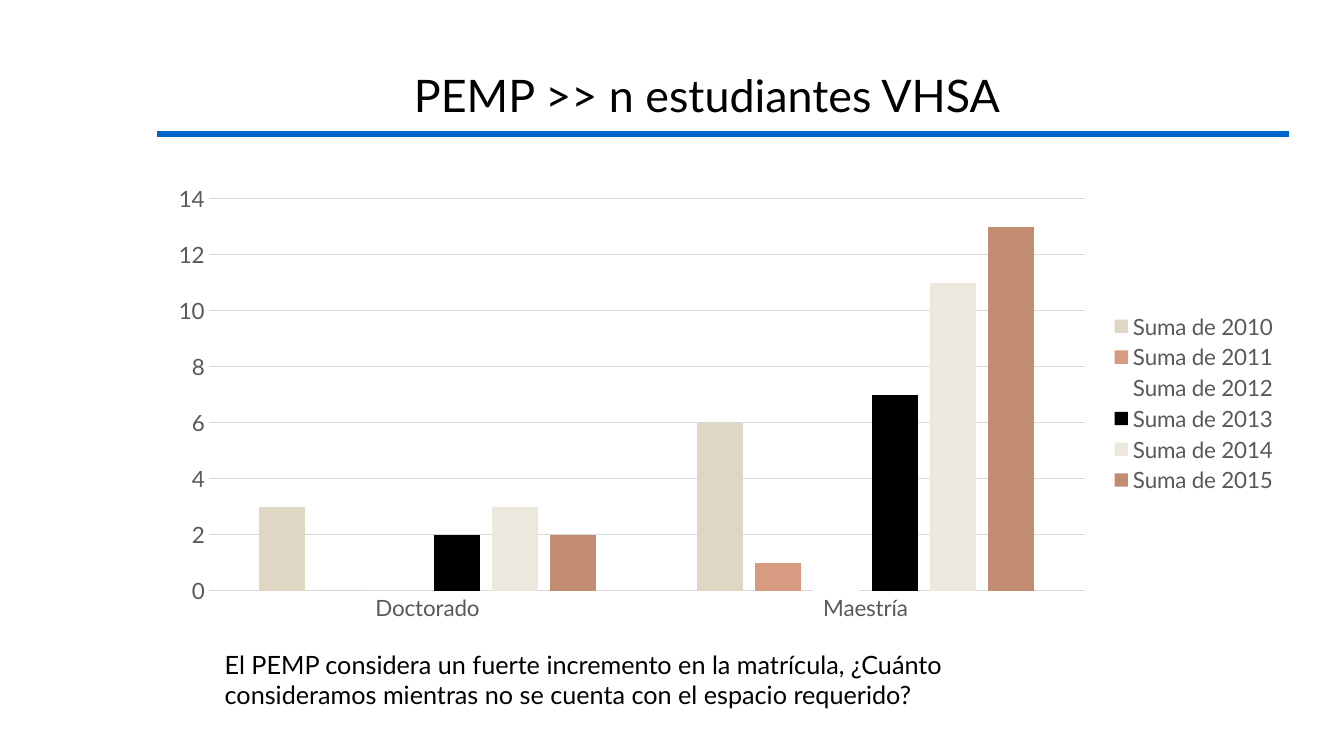
from pptx import Presentation
from pptx.chart.data import CategoryChartData
from pptx.dml.color import RGBColor
from pptx.enum.chart import XL_CHART_TYPE, XL_LEGEND_POSITION, XL_TICK_MARK
from pptx.enum.shapes import MSO_CONNECTOR
from pptx.enum.text import MSO_ANCHOR, PP_ALIGN
from pptx.oxml.ns import qn
from pptx.util import Pt
from lxml.etree import SubElement

EMU_PER_PX = 9144
BLACK = RGBColor(0x00, 0x00, 0x00)
BLUE = RGBColor(0x00, 0x66, 0xCC)
GRAY = RGBColor(0x59, 0x59, 0x59)
GRID = RGBColor(0xD9, 0xD9, 0xD9)
SAND = RGBColor(0xDF, 0xD6, 0xC3)
SALMON = RGBColor(0xD6, 0x9B, 0x80)
WHITE = RGBColor(0xFF, 0xFF, 0xFF)
IVORY = RGBColor(0xEC, 0xE8, 0xDE)
CLAY = RGBColor(0xC2, 0x8C, 0x73)

DEGREES = ["Doctorado", "Maestría"]
ENROLMENT = [
    (2010, (3, 6), SAND),
    (2011, (0, 1), SALMON),
    (2012, (0, 1), WHITE),
    (2013, (2, 7), BLACK),
    (2014, (3, 11), IVORY),
    (2015, (2, 13), CLAY),
]


def px(*lengths):
    return [length * EMU_PER_PX for length in lengths]


class SlideBuilder:
    """Adds elements in one shared style to the current slide."""

    def __init__(self, slide, font="Lato"):
        self.slide = slide
        self.font = font

    def style(self, font, size, color):
        font.name = self.font
        font.size = Pt(size)
        font.color.rgb = color

    def rule(self, left, right, y, color, width):
        line = self.slide.shapes.add_connector(
            MSO_CONNECTOR.STRAIGHT, *px(left, y, right, y))
        line.line.color.rgb = color
        line.line.width = Pt(width)
        SubElement(line._element.spPr, qn("a:effectLst"))

    def text(self, box, wording, size, align=PP_ALIGN.LEFT, anchor=MSO_ANCHOR.TOP):
        frame = self.slide.shapes.add_textbox(*px(*box)).text_frame
        frame.word_wrap = True
        frame.vertical_anchor = anchor
        frame.text = wording
        paragraph = frame.paragraphs[0]
        paragraph.alignment = align
        self.style(paragraph.runs[0].font, size, BLACK)

    def axis(self, axis, size):
        axis.major_tick_mark = XL_TICK_MARK.NONE
        axis.minor_tick_mark = XL_TICK_MARK.NONE
        self.style(axis.tick_labels.font, size, GRAY)

    def hairline(self, line):
        line.color.rgb = GRID
        line.width = Pt(0.75)

    def column_chart(self, box, categories, rows, size):
        data = CategoryChartData()
        data.categories = categories
        for year, students, _ in rows:
            data.add_series(f"Suma de {year}", students)
        chart = self.slide.shapes.add_chart(
            XL_CHART_TYPE.COLUMN_CLUSTERED, *px(*box), data).chart
        self.style(chart.font, 10, BLACK)
        chart.has_title = False
        chart.has_legend = True
        chart.legend.position = XL_LEGEND_POSITION.RIGHT
        chart.legend.include_in_layout = False
        self.style(chart.legend.font, size, GRAY)
        self.axis(chart.category_axis, size)
        self.hairline(chart.category_axis.format.line)
        self.axis(chart.value_axis, size)
        chart.value_axis.format.line.fill.background()
        self.hairline(chart.value_axis.major_gridlines.format.line)
        plot = chart.plots[0]
        plot.gap_width = 219
        plot.overlap = -27
        plot.vary_by_categories = False
        for series, (_, _, color) in zip(plot.series, rows):
            series.format.fill.solid()
            series.format.fill.fore_color.rgb = color
            series.invert_if_negative = False


def main():
    deck = Presentation()
    deck.slide_width, deck.slide_height = px(1333, 750)
    builder = SlideBuilder(deck.slides.add_slide(deck.slide_layouts[6]))
    builder.rule(156, 1278, 133, BLUE, 4.5)
    builder.text((125, 17, 1153, 108), "PEMP >> n estudiantes VHSA", 32,
                 PP_ALIGN.CENTER, MSO_ANCHOR.BOTTOM)
    builder.column_chart((155, 175, 1123, 450), DEGREES, ENROLMENT, 16)
    builder.text((213, 639, 855, 71),
                 "El PEMP considera un fuerte incremento en la matrícula, ¿Cuánto "
                 "consideramos mientras no se cuenta con el espacio requerido?", 18)
    deck.save("out.pptx")


if __name__ == "__main__":
    main()
